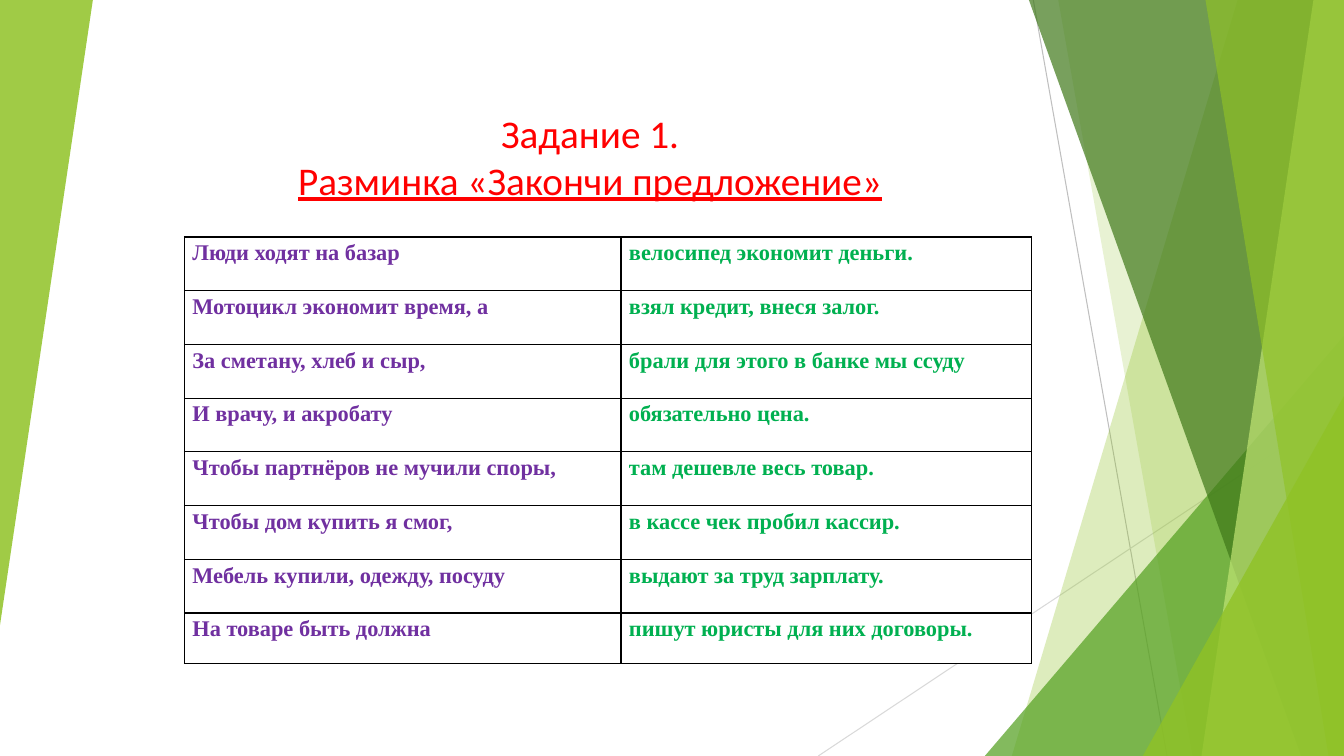
import pptx
import pptx.dml.color
import pptx.enum.shapes
import pptx.enum.text
import pptx.oxml
import pptx.oxml.ns
import pptx.util

Cm = pptx.util.Cm
Pt = pptx.util.Pt
SHAPE = pptx.enum.shapes.MSO_SHAPE

COLORS = {
    "lime": "90C226", "green": "54A021", "forest": "3F7819", "pale": "C0E474",
    "line": "BFBFBF", "light_line": "D9D9D9", "white": "FFFFFF", "black": "000000",
    "title": "FF0000", "start": "7030A0", "end": "00B050",
}

SENTENCES = [
    ("Люди ходят на базар", "велосипед экономит деньги."),
    ("Мотоцикл экономит время, а", "взял кредит, внеся залог."),
    ("За сметану, хлеб и сыр,", "брали для этого в банке мы ссуду"),
    ("И врачу, и акробату", "обязательно цена."),
    ("Чтобы партнёров не мучили споры,", "там дешевле весь товар."),
    ("Чтобы дом купить я смог,", "в кассе чек пробил кассир."),
    ("Мебель купили, одежду, посуду", "выдают за труд зарплату."),
    ("На товаре быть должна", "пишут юристы для них договоры."),
]


def rgb(name):
    return pptx.dml.color.RGBColor.from_string(COLORS[name])


def sub(parent, tag, **attrs):
    el = pptx.oxml.ns.qn(tag)
    child = parent.makeelement(el, attrs)
    parent.append(child)
    return child


def paint(sp, color, opacity):
    sp.shadow.inherit = False
    sp.line.fill.background()
    sp.fill.solid()
    sp.fill.fore_color.rgb = rgb(color)
    clr = sp.fill._xPr.find(".//" + pptx.oxml.ns.qn("a:srgbClr"))
    sub(clr, "a:alpha", val=str(opacity * 1000))


def add_triangle(slide, x, y, w, h, color, opacity):
    sp = slide.shapes.add_shape(SHAPE.ISOSCELES_TRIANGLE, Cm(x), Cm(y), Cm(w), Cm(h))
    sp.adjustments[0] = 1
    paint(sp, color, opacity)
    return sp


def add_line(slide, x1, y1, x2, y2, color):
    cn = slide.shapes.add_connector(
        pptx.enum.shapes.MSO_CONNECTOR.STRAIGHT, Cm(x1), Cm(y1), Cm(x2), Cm(y2))
    cn.line.color.rgb = rgb(color)
    cn.line.width = Pt(0.75)
    sub(cn._element.spPr, "a:effectLst")


def add_facets(slide, x, y, w, h):
    right, bottom = x + w, y + h

    def band(top_dx, bottom_dx, color, opacity):
        fb = slide.shapes.build_freeform(Cm(x + top_dx), Cm(y))
        fb.add_line_segments([
            (Cm(right), Cm(y)), (Cm(right), Cm(bottom)), (Cm(x + bottom_dx), Cm(bottom))])
        paint(fb.convert_to_shape(), color, opacity)

    def corner(dx, dy, color, opacity):
        add_triangle(slide, x + dx, y + dy, w - dx, h - dy, color, opacity)

    add_line(slide, x + 5.42, y, x + 8.79, bottom, "line")
    add_line(slide, right, y + 10.24, x, bottom, "light_line")
    band(10.57, 4.88, "lime", 30)
    band(6.05, 9.43, "lime", 20)
    corner(4.2, 8.46, "green", 72)
    band(5.31, 12.17, "forest", 70)
    band(12.48, 9.66, "pale", 70)
    band(9.76, 12.86, "lime", 65)
    corner(8.18, 9.98, "lime", 80)


def add_left_wedge(slide, x, y, w, h):
    add_triangle(slide, x, y, w, h, "lime", 85).rotation = 180


def add_run(p, text, font, size, color):
    r = p.add_run()
    r.text = text
    r.font.name = font
    r.font.size = Pt(size)
    r.font.color.rgb = rgb(color)
    return r


def add_title(slide, x, y, w, h):
    tf = slide.shapes.add_textbox(Cm(x), Cm(y), Cm(w), Cm(h)).text_frame
    tf.word_wrap = True
    tf.vertical_anchor = pptx.enum.text.MSO_ANCHOR.TOP
    for p, text, underline in (
            (tf.paragraphs[0], "Задание 1.", False),
            (tf.add_paragraph(), "Разминка «Закончи предложение»", True)):
        p.alignment = pptx.enum.text.PP_ALIGN.CENTER
        add_run(p, text, "Calibri", 28, "title").font.underline = underline


def set_borders(cell):
    tc_pr = cell._tc.get_or_add_tcPr()
    for i, side in enumerate(("L", "R", "T", "B")):
        ln = tc_pr.makeelement(pptx.oxml.ns.qn("a:ln" + side), {"w": str(Pt(1))})
        sub(sub(ln, "a:solidFill"), "a:srgbClr", val=COLORS["black"])
        tc_pr.insert(i, ln)


def fill_cell(cell, text, color, margin_right):
    cell.fill.solid()
    cell.fill.fore_color.rgb = rgb("white")
    cell.margin_left, cell.margin_right = Cm(0.2), Cm(margin_right)
    cell.margin_top = cell.margin_bottom = 0
    set_borders(cell)
    p = cell.text_frame.paragraphs[0]
    p.line_spacing = 1.15
    p.space_after = Pt(7.5)
    add_run(p, text, "Times New Roman", 16, color).font.bold = True


def add_sentences(slide, x, y, w, h):
    last_height, start_width = 1.27, 11
    n = len(SENTENCES)
    table = slide.shapes.add_table(n, 2, Cm(x), Cm(y), Cm(w), Cm(h)).table
    table.first_row = table.horz_banding = False
    table.columns[0].width = Cm(start_width)
    table.columns[1].width = Cm(w - start_width)
    for i, (start, end) in enumerate(SENTENCES):
        table.rows[i].height = Cm(last_height if i == n - 1 else (h - last_height) / (n - 1))
        fill_cell(table.cell(i, 0), start, "start", 0)
        fill_cell(table.cell(i, 1), end, "end", 0.2)


def main():
    prs = pptx.Presentation()
    prs.slide_width, prs.slide_height = Cm(33.87), Cm(19.05)
    slide = prs.slides.add_slide(prs.slide_layouts[6])
    add_facets(slide, 20.62, 0, 13.25, 19.05)
    add_left_wedge(slide, 0, 0, 2.34, 15.75)
    add_sentences(slide, 4.65, 5.97, 21.34, 10.75)
    add_title(slide, 4.85, 2.62, 20.04, 3.2)
    prs.save("out.pptx")


if __name__ == "__main__":
    main()
